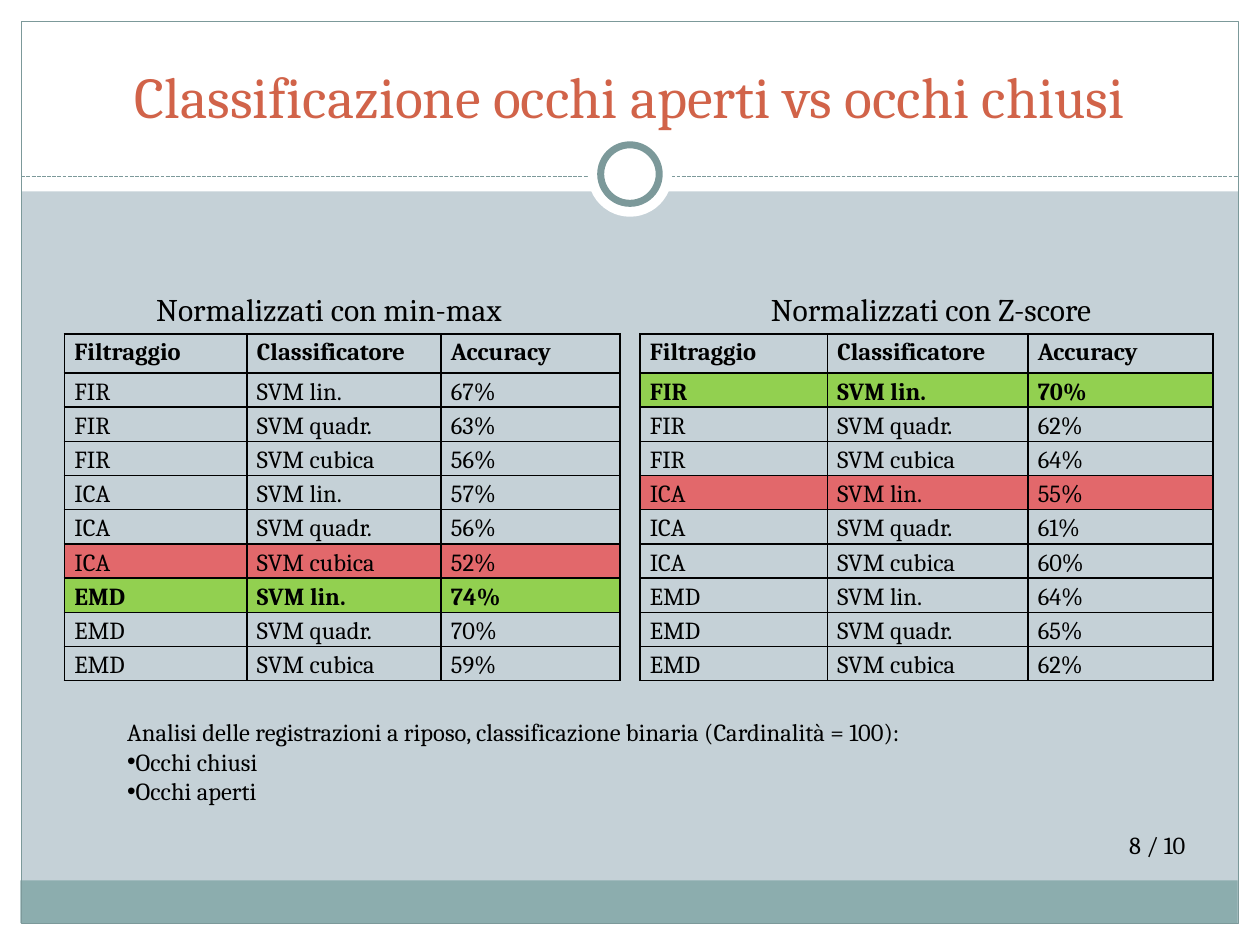
from dataclasses import dataclass
from itertools import product

from lxml.etree import SubElement
from pptx import Presentation
from pptx.dml.color import RGBColor
from pptx.enum.dml import MSO_LINE
from pptx.enum.shapes import MSO_CONNECTOR, MSO_SHAPE
from pptx.enum.text import MSO_ANCHOR, MSO_AUTO_SIZE, PP_ALIGN
from pptx.oxml import parse_xml
from pptx.oxml.ns import nsdecls, qn
from pptx.util import Cm, Pt


@dataclass(frozen=True)
class Theme:
    font: str = "Cambria"
    background: str = "C5D1D7"
    white: str = "FFFFFF"
    band: str = "8CADAE"
    frame: str = "7C999A"
    title: str = "D16349"
    text: str = "000000"
    best: str = "92D050"
    worst: str = "FF0000"
    title_size: int = 33
    caption_size: int = 18
    text_size: int = 14


theme = Theme()


def color(value):
    return RGBColor.from_string(value)


def add_run(paragraph, text, size=theme.text_size, text_color=theme.text, bold=False):
    run = paragraph.add_run()
    run.text = text
    run.font.name = theme.font
    run.font.size = Pt(size)
    run.font.bold = bold
    run.font.color.rgb = color(text_color)


presentation = Presentation()
presentation.slide_width, presentation.slide_height = Cm(25.4), Cm(19.05)
slide = presentation.slides.add_slide(presentation.slide_layouts[1])
slide.background.fill.solid()
slide.background.fill.fore_color.rgb = color(theme.background)
shapes = slide.shapes
title, body = shapes.title, slide.placeholders[1]

# Page edges, bottom band and frame
RECTANGLE, ELLIPSE = MSO_SHAPE.RECTANGLE, MSO_SHAPE.OVAL
decorations = [  # preset, left, top, width, height, fill, line width
    (RECTANGLE, 0, 18.62, 25.4, 0.43, theme.white, 0),
    (RECTANGLE, 0, 0, 25.4, 3.86, theme.white, 0),
    (RECTANGLE, 0, 0, 0.43, 19.05, theme.white, 0),
    (RECTANGLE, 24.97, 0, 0.43, 19.05, theme.white, 0),
    (RECTANGLE, 0.41, 17.75, 24.54, 0.86, theme.band, 0),
    (RECTANGLE, 0.43, 0.43, 24.54, 18.19, None, 0.75),
    (ELLIPSE, 11.85, 2.67, 1.7, 1.7, theme.white, 0),
    (ELLIPSE, 12.11, 2.92, 1.18, 1.18, theme.white, 4),
]
for preset, left, top, width, height, fill, line_width in decorations:
    if preset == ELLIPSE and not line_width:
        # The dashed divider runs behind the ring
        divider = shapes.add_connector(
            MSO_CONNECTOR.STRAIGHT, Cm(0.43), Cm(3.56), Cm(24.97), Cm(3.56))
        divider.line.color.rgb = color(theme.frame)
        divider.line.width = Pt(0.75)
        divider.line.dash_style = MSO_LINE.SQUARE_DOT
        SubElement(divider._element.spPr, qn("a:effectLst"))
    shape = shapes.add_shape(preset, Cm(left), Cm(top), Cm(width), Cm(height))
    shape.shadow.inherit = False
    if fill:
        shape.fill.solid()
        shape.fill.fore_color.rgb = color(fill)
    else:
        shape.fill.background()
    if line_width:
        shape.line.color.rgb = color(theme.frame)
        shape.line.width = Pt(line_width)
    else:
        shape.line.fill.background()

# Title, brought in front of the white header
shapes._spTree.append(title._element)
title.left, title.top, title.width, title.height = Cm(0.84), Cm(0.64), Cm(23.71), Cm(2.11)
title.text_frame.vertical_anchor = MSO_ANCHOR.BOTTOM
title.text_frame.auto_size = MSO_AUTO_SIZE.NONE
title.text_frame.paragraphs[0].alignment = PP_ALIGN.CENTER
add_run(title.text_frame.paragraphs[0], "Classificazione occhi aperti vs occhi chiusi",
        theme.title_size, theme.title)

# Result tables: every filter with every classifier, best and worst highlighted
headers = ("Filtraggio", "Classificatore", "Accuracy")
methods = list(product(("FIR", "ICA", "EMD"), ("SVM lin.", "SVM quadr.", "SVM cubica")))
results = [  # left, column widths, accuracies
    (1.3, (3.68, 3.91, 3.61), (67, 63, 56, 57, 56, 52, 74, 70, 59)),
    (12.9, (3.78, 4.04, 3.73), (70, 62, 64, 55, 61, 60, 64, 65, 62)),
]
for left, widths, accuracies in results:
    rows = [headers] + [(*method, f"{value}%") for method, value in zip(methods, accuracies)]
    best_row = 1 + accuracies.index(max(accuracies))
    worst_row = 1 + accuracies.index(min(accuracies))
    table = shapes.add_table(len(rows), len(headers), Cm(left), Cm(6.73),
                             Cm(sum(widths)), Cm(7.0)).table
    table.first_row = table.horz_banding = False
    for column, width in zip(table.columns, widths):
        column.width = Cm(width)
    for row_index, values in enumerate(rows):
        is_header = row_index == 0
        table.rows[row_index].height = Cm(0.79 if is_header else 0.69)
        for column_index, value in enumerate(values):
            cell = table.cell(row_index, column_index)
            cell.margin_left = cell.margin_right = Cm(0.2)
            cell.margin_top = cell.margin_bottom = 0
            cell.vertical_anchor = MSO_ANCHOR.TOP if is_header else MSO_ANCHOR.MIDDLE
            paragraph = cell.text_frame.paragraphs[0]
            paragraph.alignment = PP_ALIGN.JUSTIFY if is_header else PP_ALIGN.LEFT
            paragraph.line_spacing = 1.15
            add_run(paragraph, value, bold=row_index in (0, best_row))
            if row_index in (best_row, worst_row):
                cell.fill.solid()
                cell.fill.fore_color.rgb = color(
                    theme.best if row_index == best_row else theme.worst)
            else:
                cell.fill.background()
            properties = cell._tc.get_or_add_tcPr()
            if row_index == worst_row:
                fill_color = properties.find(".//" + qn("a:srgbClr"))
                SubElement(fill_color, qn("a:alpha"), val="50000")
            for position, side in enumerate(("lnL", "lnR", "lnT", "lnB")):
                properties.insert(position, parse_xml(
                    f'<a:{side} {nsdecls("a")} w="{Pt(1)}"><a:solidFill>'
                    f'<a:srgbClr val="{theme.text}"/></a:solidFill></a:{side}>'))

# Table captions and page number
labels = [  # text, left, top, width, height, size
    ("Normalizzati con Z-score", 15.29, 5.72, 7.62, 1.02, theme.caption_size),
    ("Normalizzati con min-max", 2.9, 5.72, 8.2, 1.02, theme.caption_size),
    ("8 / 10", 22.1, 16.33, 2.46, 1.4, theme.text_size),
]
for text, left, top, width, height, size in labels:
    frame = shapes.add_textbox(Cm(left), Cm(top), Cm(width), Cm(height)).text_frame
    frame.word_wrap = True
    add_run(frame.paragraphs[0], text, size)
    if size == theme.text_size:
        frame.vertical_anchor = MSO_ANCHOR.MIDDLE
        frame.paragraphs[0].alignment = PP_ALIGN.CENTER

# Notes on the recordings, with bullets on the two conditions
shapes._spTree.append(body._element)
body.left, body.top, body.width, body.height = Cm(2.31), Cm(14.33), Cm(20.6), Cm(2.06)
body.text_frame.auto_size = MSO_AUTO_SIZE.NONE
descriptions = [
    ("Analisi delle registrazioni a riposo, classificazione binaria (Cardinalità = 100):", False),
    ("Occhi chiusi", True),
    ("Occhi aperti", True),
]
for index, (text, bulleted) in enumerate(descriptions):
    paragraph = body.text_frame.add_paragraph() if index else body.text_frame.paragraphs[0]
    paragraph.space_before = Pt(0)
    paragraph.line_spacing = 1.0
    properties = paragraph._p.get_or_add_pPr()
    properties.set("marL", "0")
    properties.set("indent", "0")
    if bulleted:
        SubElement(properties, qn("a:buFont"), typeface="Arial")
        SubElement(properties, qn("a:buChar"), char="•")
    else:
        SubElement(properties, qn("a:buNone"))
    add_run(paragraph, text)

presentation.save("out.pptx")
